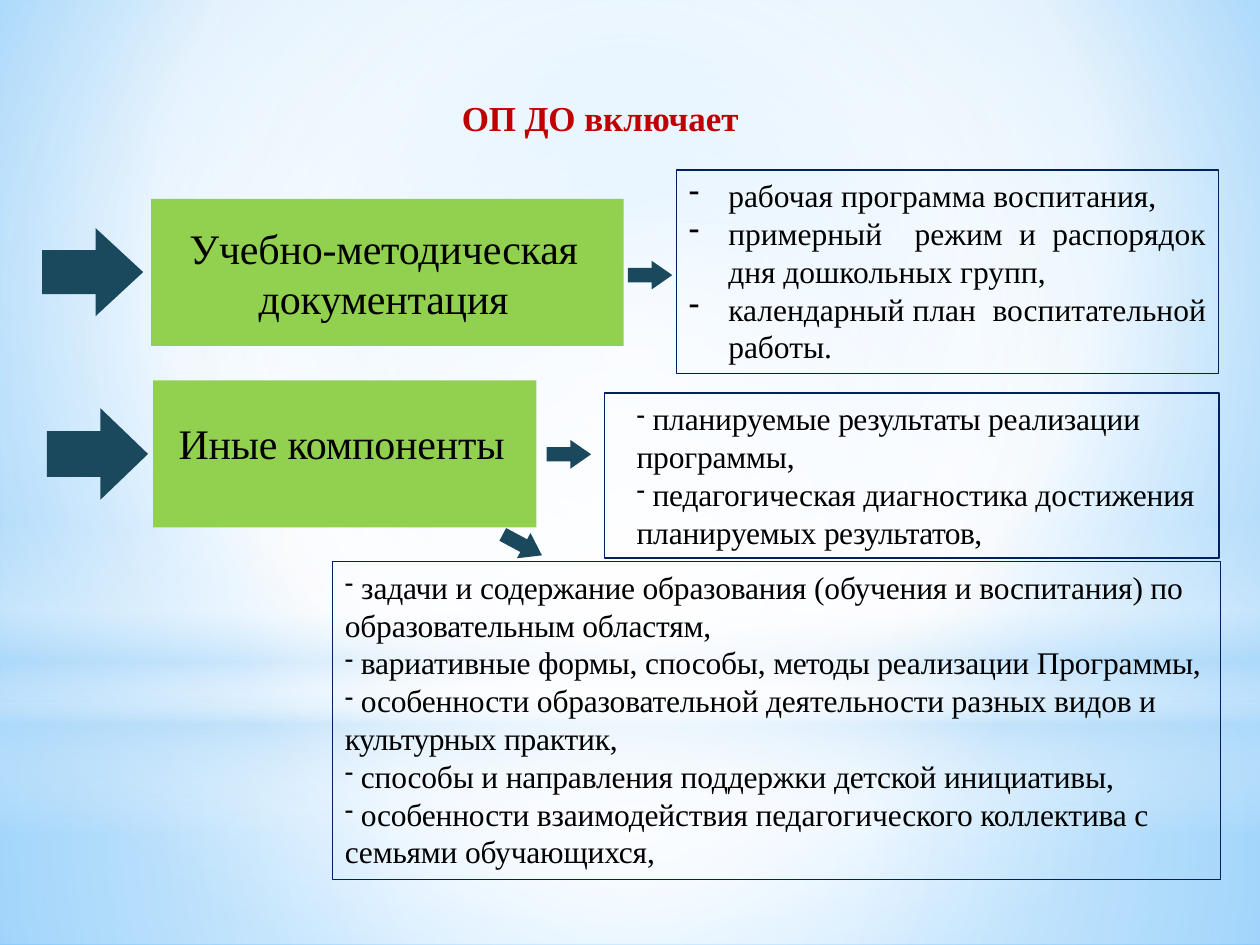
from pptx import Presentation
from pptx.dml.color import RGBColor
from pptx.enum.shapes import MSO_SHAPE as SHAPE
from pptx.enum.text import MSO_ANCHOR as ANCHOR, MSO_AUTO_SIZE as AUTO, PP_ALIGN as ALIGN
from pptx.oxml import parse_xml
from pptx.oxml.ns import nsdecls, qn
from pptx.util import Pt

FONT = "Times New Roman"
GREEN, TEAL, NAVY, RED, BLACK = "92D050", "1A495D", "002060", "C00000", "000000"
CENTER = (50, 50, 50, 50)

BANDS = [
    (SHAPE.RECTANGLE, (0, 402, 720, 138),
     [(0, "FFFFFF", 91), (37, "FFFFFF", 76), (100, "B4DCFA", 79)], CENTER),
    (SHAPE.RECTANGLE, (0, 0, 720, 402),
     [(0, "FFFFFF", 89), (48, "FFFFFF", 62), (100, "B4DCFA", 79)], CENTER),
    (SHAPE.RECTANGLE, (0, 297, 720, 180),
     [(0, "FFFFFF", 0), (29, "FFFFFF", 30), (45, "B4DCFA", 40),
      (55, "FFFFFF", 26), (65, "B4DCFA", 60), (100, "FFFFFF", 0)], None),
    (SHAPE.OVAL, (0, 126, 720, 402),
     [(0, "FFFFFF", 100), (56, "FFFFFF", 0)], CENTER),
]

DOCUMENTS = [
    [("рабочая программа воспитания, ", 0)],
    [("примерный  режим и распорядок дня дошкольных групп, ", 0)],
    [("календарный план  воспитательной работы. ", 0)],
]
RESULTS = [
    [(" планируемые ", -0.1), ("результаты ", -0.3), ("реализации программы,", -0.1)],
    [(" педагогическая диагностика достижения планируемых ", -0.1), ("результатов,", -0.3)],
]
CONTENTS = [
    [(" ", -0.1), ("з", -0.3), ("адачи и ", -0.1), ("содержание ", -0.2),
     ("образования (обучения и воспитания) по  образовательным областям,", -0.1)],
    [(" вариативные формы, способы, ", -0.1), ("методы ", -0.3),
     ("реализации Программы,", -0.1)],
    [(" особенности образовательной деятельности разных видов и  ", -0.1),
     ("культурных ", -0.3), ("практик,", -0.1)],
    [(" способы и направления поддержки ", -0.1), ("детской ", -0.2),
     ("инициативы,", -0.1)],
    [(" особенности взаимодействия педагогического коллектива с  семьями обучающихся", -0.1),
     (",", -0.3)],
]


def rgb(color):
    return RGBColor.from_string(color)


def set_gradient(fill, parent, stops, focus):
    fill.gradient()
    gs = "".join(
        f'<a:gs pos="{pos * 1000}"><a:srgbClr val="{color}">'
        f'<a:alpha val="{alpha * 1000}"/></a:srgbClr></a:gs>'
        for pos, color, alpha in stops)
    if focus:
        l, t, r, b = (v * 1000 for v in focus)
        kind = (f'<a:path path="circle"><a:fillToRect l="{l}" t="{t}" '
                f'r="{r}" b="{b}"/></a:path>')
    else:
        kind = '<a:lin ang="5400000" scaled="0"/>'
    grad = parse_xml(f'<a:gradFill {nsdecls("a")} rotWithShape="1">'
                     f'<a:gsLst>{gs}</a:gsLst>{kind}</a:gradFill>')
    parent.replace(parent.find(qn("a:gradFill")), grad)


def add_shape(s, kind, box, fill=None, line=None):
    sp = s.shapes.add_shape(kind, *map(Pt, box))
    sp.shadow.inherit = False
    if fill:
        sp.fill.solid()
        sp.fill.fore_color.rgb = rgb(fill)
    else:
        sp.fill.background()
    if line:
        sp.line.color.rgb = rgb(line)
        sp.line.width = Pt(0.75)
    else:
        sp.line.fill.background()
    return sp


def add_band(s, kind, box, stops, focus):
    sp = add_shape(s, kind, box)
    set_gradient(sp.fill, sp._element.spPr, stops, focus)


def add_arrow(s, box, head, rotation=0):
    sp = add_shape(s, SHAPE.RIGHT_ARROW, box, TEAL)
    sp.adjustments[1] = head
    sp.rotation = rotation


def add_run(p, text, size, spacing=0, color=BLACK, bold=False):
    r = p.add_run()
    r.text = text
    r.font.name = FONT
    r.font.size = Pt(size)
    r.font.bold = bold
    r.font.color.rgb = rgb(color)
    if spacing:
        r._r.get_or_add_rPr().set("spc", str(round(spacing * 100)))


def set_heading(sp, runs, size, **style):
    tf = sp.text_frame
    tf.word_wrap = True
    tf.auto_size = AUTO.SHAPE_TO_FIT_TEXT
    tf.vertical_anchor = ANCHOR.TOP
    tf.margin_left = tf.margin_right = tf.margin_bottom = 0
    tf.margin_top = Pt(0.9)
    p = tf.paragraphs[0]
    p.alignment = ALIGN.CENTER
    p.space_before = Pt(1)
    for text, spacing in runs:
        add_run(p, text, size, spacing, **style)


def add_title(s, box, runs):
    sp = s.shapes.title
    sp.left, sp.top, sp.width, sp.height = map(Pt, box)
    s.shapes._spTree.append(sp._element)
    set_heading(sp, runs, 20, color=RED, bold=True)


def add_label(s, box, text_box, text):
    add_shape(s, SHAPE.RECTANGLE, box, GREEN)
    sp = s.shapes.add_textbox(*map(Pt, text_box))
    set_heading(sp, [(text, -0.1)], 24)


def add_list(s, box, items, align=ALIGN.LEFT, margin=0, indent=0, bullet_size=100):
    tf = add_shape(s, SHAPE.RECTANGLE, box, line=NAVY).text_frame
    tf.word_wrap = True
    tf.vertical_anchor = ANCHOR.TOP
    for i, runs in enumerate(items):
        p = tf.add_paragraph() if i else tf.paragraphs[0]
        p.alignment = align
        pPr = p._p.get_or_add_pPr()
        pPr.set("marL", str(Pt(margin)))
        pPr.set("indent", str(Pt(indent)))
        pPr.append(parse_xml(f'<a:buSzPct {nsdecls("a")} val="{bullet_size * 1000}"/>'))
        pPr.append(parse_xml(f'<a:buChar {nsdecls("a")} char="-"/>'))
        for text, spacing in runs:
            add_run(p, text, 18, spacing)


def main():
    prs = Presentation()
    prs.slide_width, prs.slide_height = Pt(720), Pt(540)
    s = prs.slides.add_slide(prs.slide_layouts[5])
    fill = s.background.fill
    set_gradient(fill, s._element.cSld.bg.bgPr,
                 [(0, "9ED5FF", 100), (60, "FFFFFF", 100), (100, "5BB9FF", 100)],
                 (20, 10, 20, 60))
    for band in BANDS:
        add_band(s, *band)

    add_title(s, (124.5, 54, 437, 25.2), [("ОП ДО ", -0.1), ("включает", 0)])
    add_label(s, (86.4, 113.6, 270, 84), (100, 126, 238.5, 59),
              "Учебно-методическая документация")
    add_label(s, (87.6, 217.4, 219, 84), (97.2, 237.6, 196, 30.2), "Иные компоненты")

    add_arrow(s, (24, 130.4, 57.8, 50.2), 0.54)
    add_arrow(s, (26.8, 233.2, 57.8, 52.4), 0.52)
    for left, top, rotation in [(358.8, 149, 0), (312.4, 251.4, 0), (285.8, 303.2, 28.1)]:
        add_arrow(s, (left, top, 25.4, 16.4), 0.72, rotation)

    add_list(s, (386.6, 97.2, 309.8, 116.4), DOCUMENTS, ALIGN.JUSTIFY, 22.5, -22.5)
    add_list(s, (345.4, 224.6, 351.2, 94.4), RESULTS, margin=11.3, bullet_size=80)
    add_list(s, (190, 321, 507.4, 181.6), CONTENTS, bullet_size=80)
    prs.save("out.pptx")


if __name__ == "__main__":
    main()
